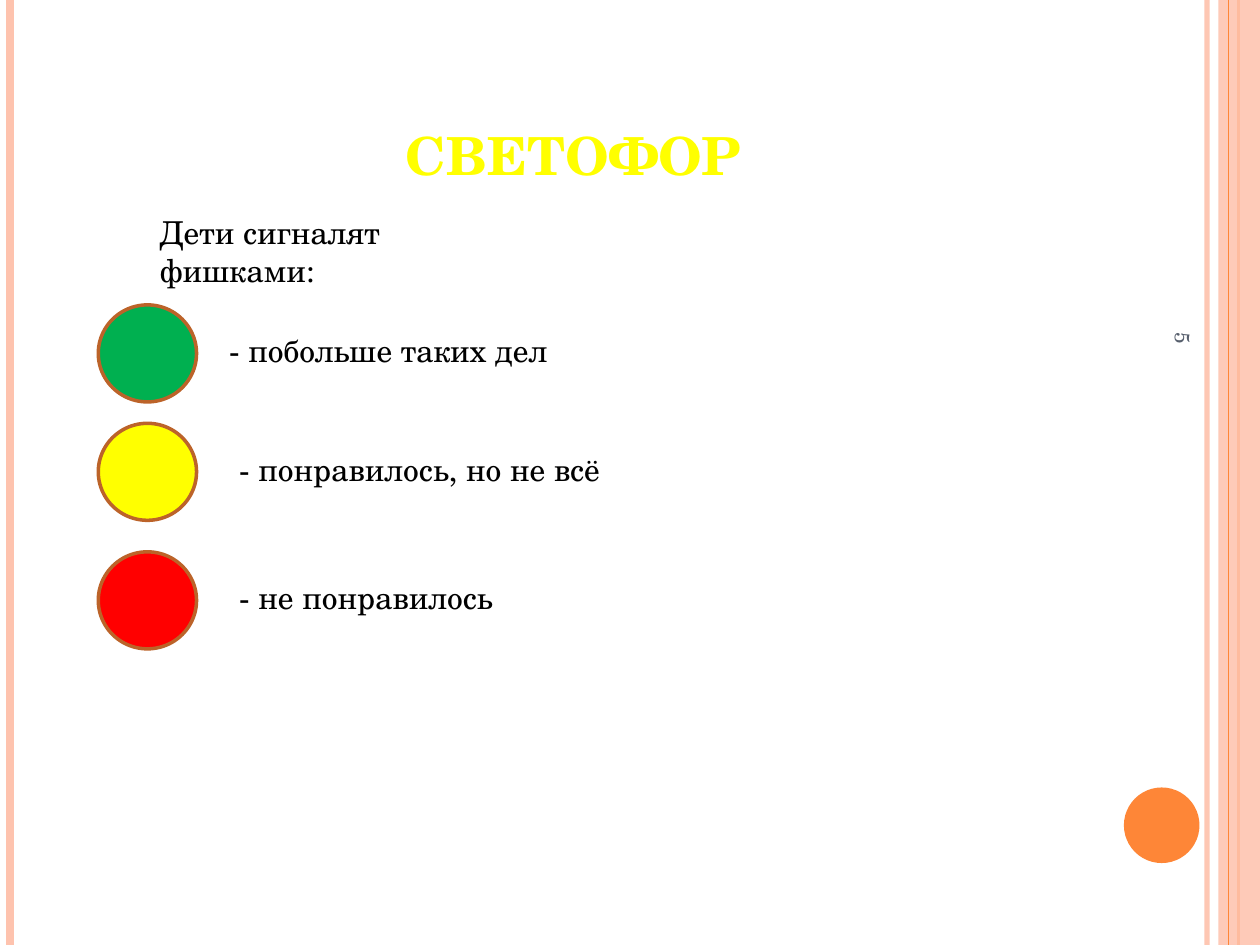
"""Build the traffic light feedback slide."""
import lxml.etree
import pptx
import pptx.dml.color
import pptx.enum.shapes
import pptx.enum.text
import pptx.oxml.ns
import pptx.util

Inches = pptx.util.Inches
RGBColor = pptx.dml.color.RGBColor
Anchor = pptx.enum.text.MSO_ANCHOR
Shape = pptx.enum.shapes.MSO_SHAPE

PINK = RGBColor(0xFE, 0xC3, 0xAE)
ORANGE = RGBColor(0xFE, 0x86, 0x37)
BROWN = RGBColor(0xBC, 0x63, 0x29)
GREEN = RGBColor(0x00, 0xB0, 0x50)
YELLOW = RGBColor(0xFF, 0xFF, 0x00)
RED = RGBColor(0xFF, 0x00, 0x00)
BLACK = RGBColor(0x00, 0x00, 0x00)
SLATE = RGBColor(0x57, 0x5F, 0x6D)


class SlideBuilder:
    font_name = "TeX Gyre Schola"

    def __init__(self, slide):
        self.slide = slide

    def fill_text(self, shape, text, size, color, bold=False, anchor=Anchor.TOP, wrap=False):
        frame = shape.text_frame
        settings = {
            "text": text,
            "word_wrap": wrap,
            "auto_size": pptx.enum.text.MSO_AUTO_SIZE.NONE,
            "vertical_anchor": anchor,
        }
        for name, value in settings.items():
            setattr(frame, name, value)
        paragraph = frame.paragraphs[0]
        paragraph.alignment = pptx.enum.text.PP_ALIGN.LEFT
        font = paragraph.runs[0].font
        formats = {"name": self.font_name, "size": pptx.util.Pt(size), "bold": bold}
        for name, value in formats.items():
            setattr(font, name, value)
        font.color.rgb = color

    def title(self, text, left, top, width, height):
        shape = self.slide.shapes.title
        box = {"left": left, "top": top, "width": width, "height": height}
        for name, value in box.items():
            setattr(shape, name, Inches(value))
        self.fill_text(shape, text, 30, YELLOW, bold=True, anchor=Anchor.BOTTOM, wrap=True)

    def text(self, text, left, top, width, height, size=18, color=BLACK, rotation=0, **layout):
        shape = self.slide.shapes.add_textbox(*map(Inches, (left, top, width, height)))
        shape.rotation = rotation
        self.fill_text(shape, text, size, color, **layout)

    def shape(self, kind, left, top, width, height, fill, outline=None, opacity=100):
        shape = self.slide.shapes.add_shape(kind, *map(Inches, (left, top, width, height)))
        shape.shadow.inherit = False
        shape.fill.solid()
        shape.fill.fore_color.rgb = fill
        if outline is None:
            shape.line.fill.background()
        else:
            shape.line.color.rgb = outline
            shape.line.width = pptx.util.Pt(2)
        self.set_opacity(shape, opacity)

    def vertical_line(self, x, color, width, opacity=100):
        line = self.slide.shapes.add_connector(
            pptx.enum.shapes.MSO_CONNECTOR.STRAIGHT, Inches(x), 0, Inches(x), Inches(7.5))
        line.line.color.rgb = color
        line.line.width = pptx.util.Pt(width)
        self.set_opacity(line, opacity)
        properties = line._element.spPr
        lxml.etree.SubElement(properties, pptx.oxml.ns.qn("a:effectLst"))

    def set_opacity(self, shape, opacity):
        if opacity < 100:
            color = next(shape._element.spPr.iter(pptx.oxml.ns.qn("a:srgbClr")))
            alpha = lxml.etree.SubElement(color, pptx.oxml.ns.qn("a:alpha"))
            alpha.set("val", str(opacity * 1000))


def main():
    presentation = pptx.Presentation()
    presentation.slide_width = Inches(10)
    presentation.slide_height = Inches(7.5)
    slide = presentation.slides.add_slide(presentation.slide_layouts[5])
    builder = SlideBuilder(slide)

    builder.vertical_line(9.58, PINK, 3, opacity=93)
    builder.vertical_line(0.08, PINK, 4.5)
    builder.vertical_line(9.83, ORANGE, 1.5)
    builder.shape(Shape.RECTANGLE, 9.67, 0, 0.33, 7.5, PINK, opacity=87)
    builder.vertical_line(9.75, ORANGE, 0.75)
    builder.shape(Shape.OVAL, 8.92, 6.25, 0.6, 0.6, ORANGE)

    builder.title("СВЕТОФОР", 3.12, 0, 3.72, 1.53)
    builder.text("5", 7.64, 4.09, 3.5, 0.4, size=12, color=SLATE, rotation=90,
                 anchor=Anchor.MIDDLE)
    builder.text("Дети сигналят фишками:", 1.17, 1.64, 3.2, 0.71, wrap=True)

    signals = [
        (GREEN, 2.42, "- побольше таких дел", 1.72, 2.73),
        (YELLOW, 3.36, "- понравилось, но не всё", 1.8, 3.12),
        (RED, 4.38, "- не понравилось", 1.8, 2.23),
    ]
    for color, top, meaning, left, width in signals:
        builder.shape(Shape.OVAL, 0.78, top, 0.78, 0.77, color, outline=BROWN)
        builder.text(meaning, left, top + 0.16, width, 0.4)

    presentation.save("out.pptx")


if __name__ == "__main__":
    main()
